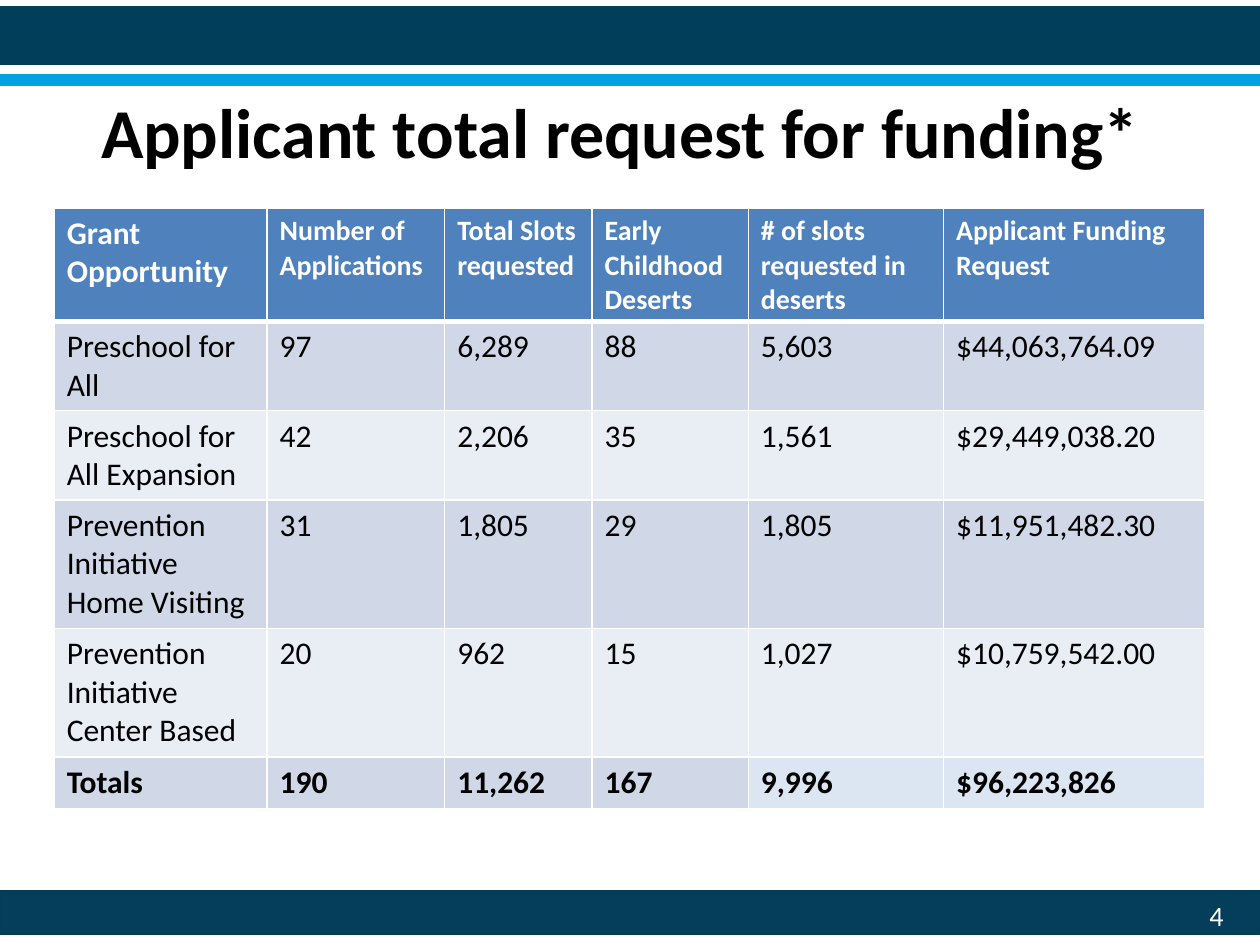
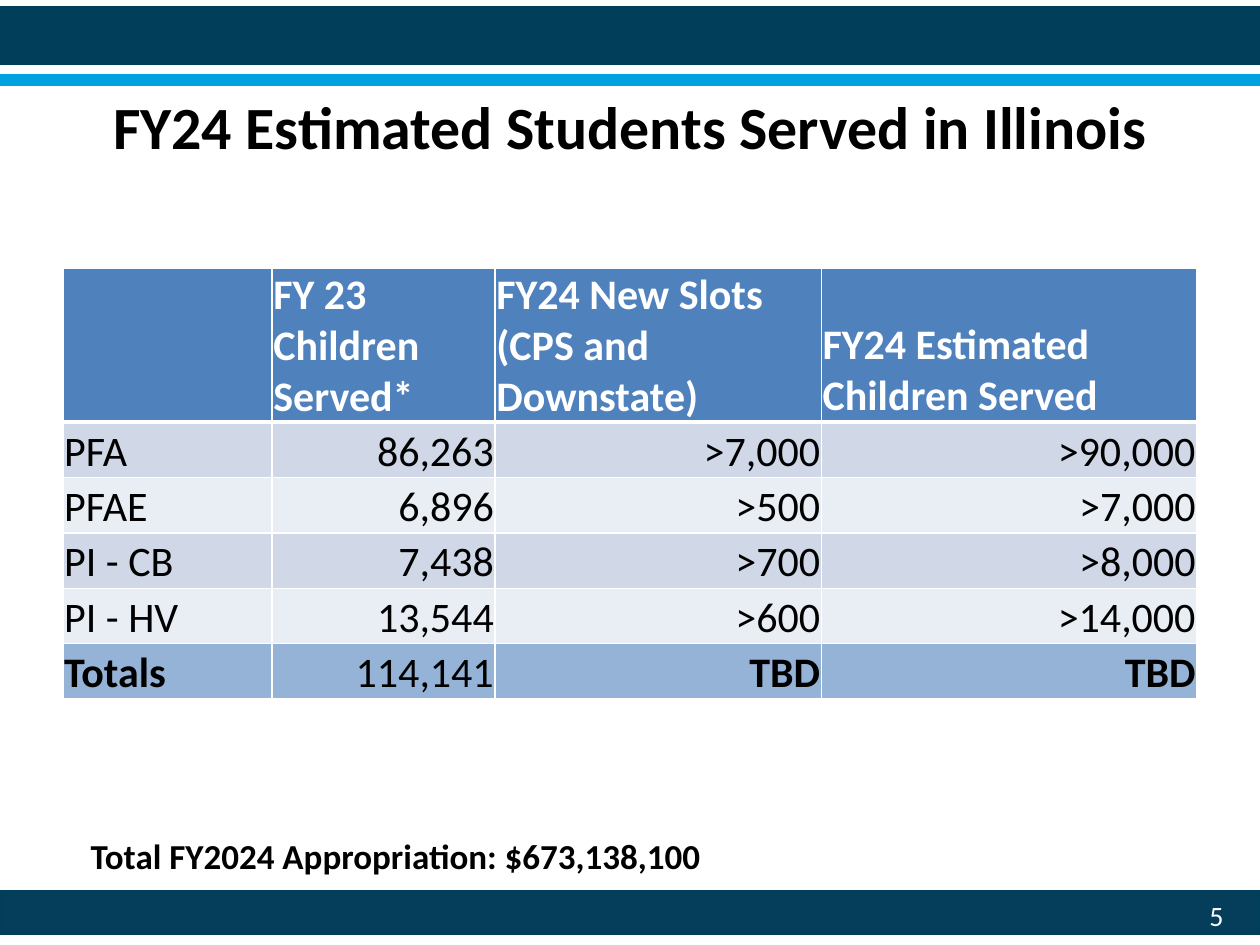
from lxml.etree import SubElement
from pptx import Presentation
from pptx.dml.color import RGBColor
from pptx.enum.shapes import MSO_SHAPE
from pptx.enum.text import MSO_ANCHOR as Anchor, PP_ALIGN as Align
from pptx.oxml.ns import qn
from pptx.util import Inches, Pt

FONT = "Calibri"
WHITE = RGBColor(0xFF, 0xFF, 0xFF)
BLACK = RGBColor(0x00, 0x00, 0x00)
NAVY = RGBColor(0x00, 0x3E, 0x5A)
FOOTER_NAVY = RGBColor(0x04, 0x3E, 0x5A)
SKY = RGBColor(0x00, 0xA3, 0xE0)
HEADER_BLUE = RGBColor(0x4F, 0x81, 0xBD)
ROW_TINTS = (RGBColor(0xD0, 0xD8, 0xE8), RGBColor(0xE9, 0xED, 0xF4))
PALE_BLUE = RGBColor(0xDC, 0xE6, 0xF2)
TOTALS_BLUE = RGBColor(0x95, 0xB3, 0xD7)

SLIDE_W, SLIDE_H = 10, 7.5
FOOTER_TOP = 7.08
BANDS = [  # top, height, fill, outline
    (FOOTER_TOP, 0.33, FOOTER_NAVY, NAVY),
    (0.06, 0.44, NAVY, NAVY),
    (0.6, 0.07, SKY, SKY),
]
TITLE_SIZE = (9, 0.83)

FUNDING = {
    "page": 4,
    "title": "Applicant total request for funding*",
    "title_at": (0.42, 0.62),
    "title_pt": 40,
    "table_at": (0.43, 1.65),
    "columns": [1.69, 1.41, 1.17, 1.24, 1.55, 2.07],
    "row_heights": [0.9, 0.71, 0.71, 1.02, 1.02, 0.41],
    "rows": [
        ["Grant Opportunity", "Number of Applications", "Total Slots requested",
         "Early Childhood Deserts", "# of slots requested in deserts",
         "Applicant Funding Request"],
        ["Preschool for All", "97", "6,289", "88", "5,603", "$44,063,764.09"],
        ["Preschool for All Expansion", "42", "2,206", "35", "1,561", "$29,449,038.20"],
        ["Prevention Initiative Home Visiting", "31", "1,805", "29", "1,805",
         "$11,951,482.30"],
        ["Prevention Initiative Center Based", "20", "962", "15", "1,027",
         "$10,759,542.00"],
        ["Totals", "190", "11,262", "167", "9,996", "$96,223,826"],
    ],
    "totals_fills": [ROW_TINTS[0]] * 4 + [PALE_BLUE] * 2,
    "totals_bold": [True] * 6,
    "header_pts": [18] + [16] * 5,
    "body_pt": 18,
    "tight": False,
}
STUDENTS = {
    "page": 5,
    "title": "FY24 Estimated Students Served in Illinois",
    "title_at": (0.5, 0.58),
    "title_pt": 34.2,
    "title_space_after": 6,
    "table_at": (0.5, 2.13),
    "columns": [1.66, 1.77, 2.59, 2.98],
    "row_heights": [1.22] + [0.44] * 5,
    "rows": [
        ["", "FY 23 Children Served*", "FY24 New Slots (CPS and Downstate)",
         "FY24 Estimated Children Served"],
        ["PFA", "86,263", ">7,000", ">90,000"],
        ["PFAE", "6,896", ">500", ">7,000"],
        ["PI - CB", "7,438", ">700", ">8,000"],
        ["PI - HV", "13,544", ">600", ">14,000"],
        ["Totals", "114,141", "TBD", "TBD"],
    ],
    "totals_fills": [TOTALS_BLUE] * 4,
    "totals_bold": [True, False, True, True],
    "header_pts": [24] * 4,
    "body_pt": 24,
    "tight": True,  # bottom-anchored cells with hairline margins
    "note": "Total FY2024 Appropriation: $673,138,100",
    "note_box": (0.62, 6.57, 8.41, 0.44),
}


def style(paragraph, size, color, bold=False, align=Align.LEFT):
    paragraph.alignment = align
    for run in paragraph.runs:
        run.font.name, run.font.size = FONT, Pt(size)
        run.font.bold, run.font.color.rgb = bold, color


def add_text(slide, box, text, size, color, bold=False, align=Align.LEFT,
             anchor=Anchor.TOP):
    frame = slide.shapes.add_textbox(*map(Inches, box)).text_frame
    frame.word_wrap = True
    frame.vertical_anchor = anchor
    frame.text = text
    style(frame.paragraphs[0], size, color, bold, align)
    return frame.paragraphs[0]


def add_bands(slide, page):
    for top, height, fill, outline in BANDS:
        band = slide.shapes.add_shape(
            MSO_SHAPE.RECTANGLE, 0, Inches(top), Inches(SLIDE_W), Inches(height))
        band.shadow.inherit = False
        band.fill.solid()
        band.fill.fore_color.rgb = fill
        band.line.color.rgb = outline
        band.line.width = Pt(2)
    add_text(slide, (9.5, FOOTER_TOP, 0.5, 0.4), str(page), 16, WHITE)


def set_borders(cell, **widths):
    """Draw white cell borders; widths are points keyed by side L, R, T, B."""
    properties = cell._tc.get_or_add_tcPr()
    for side, width in widths.items():
        line = SubElement(properties, qn(f"a:ln{side}"), w=str(Pt(width)))
        fill = SubElement(line, qn("a:solidFill"))
        SubElement(fill, qn("a:srgbClr"), val=str(WHITE))


def add_grid(slide, content):
    rows, columns = content["rows"], content["columns"]
    heights = content["row_heights"]
    box = (*content["table_at"], sum(columns), sum(heights))
    table = slide.shapes.add_table(len(rows), len(columns), *map(Inches, box)).table
    table.first_row = table.horz_banding = False
    for column, width in zip(table.columns, columns):
        column.width = Inches(width)
    for row, height in zip(table.rows, heights):
        row.height = Inches(height)

    for r, values in enumerate(rows):
        header, totals = r == 0, r == len(rows) - 1
        for c, value in enumerate(values):
            cell = table.cell(r, c)
            set_borders(cell, L=1, R=1, T=3 if r == 1 else 1, B=3 if header else 1)
            if header:
                fill, color, bold = HEADER_BLUE, WHITE, True
            elif totals:
                fill, color = content["totals_fills"][c], BLACK
                bold = content["totals_bold"][c]
            else:
                fill, color, bold = ROW_TINTS[(r - 1) % 2], BLACK, False
            cell.fill.solid()
            cell.fill.fore_color.rgb = fill
            align = Align.LEFT
            if content["tight"]:
                cell.vertical_anchor = Anchor.BOTTOM
                cell.margin_left = cell.margin_right = cell.margin_top = Inches(0.01)
                cell.margin_bottom = 0
                if c and not header:
                    align = Align.RIGHT
            cell.text = value
            size = content["header_pts"][c] if header else content["body_pt"]
            style(cell.text_frame.paragraphs[0], size, color, bold, align)


def add_slide(deck, content):
    slide = deck.slides.add_slide(deck.slide_layouts[6])
    add_bands(slide, content["page"])
    title = add_text(slide, (*content["title_at"], *TITLE_SIZE), content["title"],
                     content["title_pt"], BLACK, True, Align.CENTER, Anchor.MIDDLE)
    title.space_after = Pt(content.get("title_space_after", 0))
    add_grid(slide, content)
    if "note" in content:
        add_text(slide, content["note_box"], content["note"], 20, BLACK, True)


def main():
    deck = Presentation()
    deck.slide_width, deck.slide_height = Inches(SLIDE_W), Inches(SLIDE_H)
    for content in (FUNDING, STUDENTS):
        add_slide(deck, content)
    deck.save("out.pptx")


if __name__ == "__main__":
    main()
